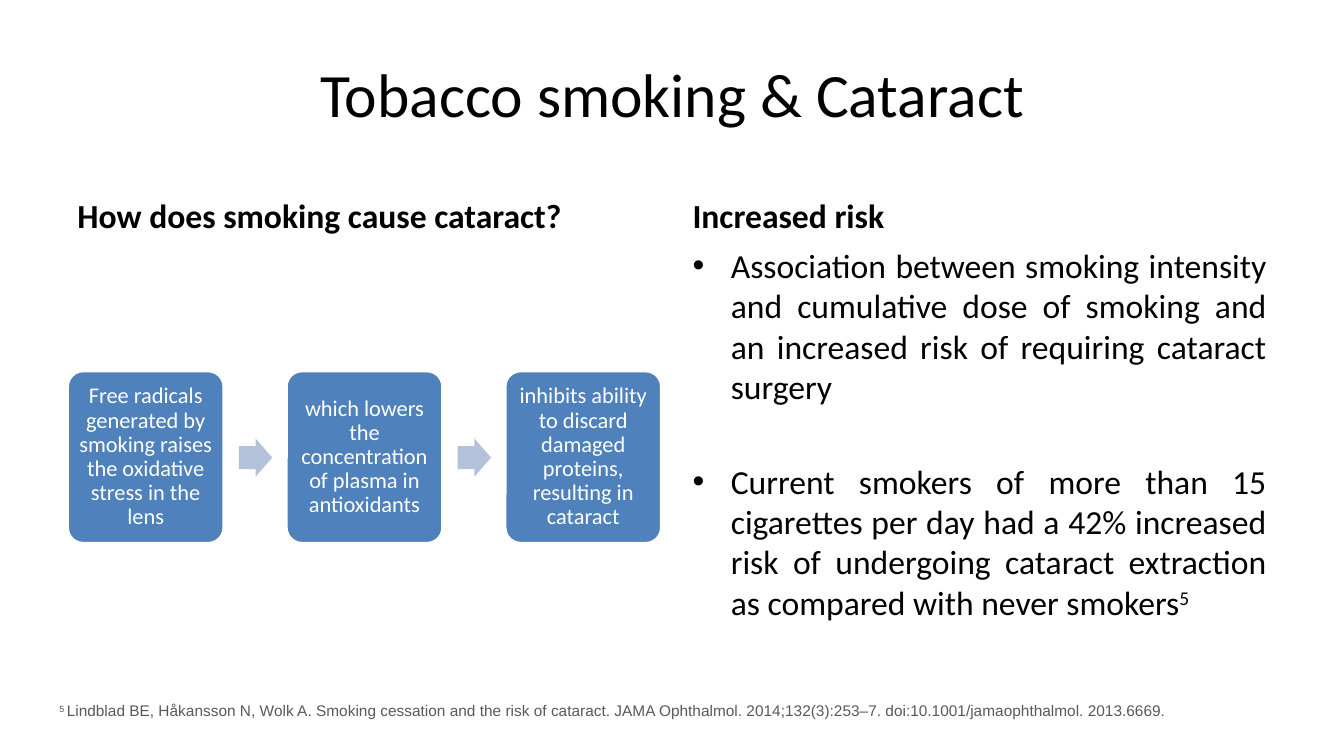
"""Build the slide on tobacco smoking and cataract."""
from lxml import etree
from pptx import Presentation
from pptx import util as u
from pptx.dml.color import RGBColor
from pptx.enum import shapes, text
from pptx.oxml.ns import qn

COLOURS = {"text": "000000", "box": "4F81BD", "arrow": "B3C1DB", "white": "FFFFFF", "source": "595959"}


def set_font(paragraph, size, colour="text", name="Calibri", bold=False):
    paragraph.font.name = name
    paragraph.font.size = u.Pt(size)
    paragraph.font.bold = bold
    paragraph.font.color.rgb = RGBColor.from_string(COLOURS[colour])


def add_text_frame(slide, left, top, width, height, anchor):
    frame = slide.shapes.add_textbox(u.Inches(left), u.Inches(top), u.Inches(width), u.Inches(height)).text_frame
    frame.word_wrap = True
    frame.vertical_anchor = anchor
    return frame


presentation = Presentation()
presentation.slide_width = u.Inches(13.33)
presentation.slide_height = u.Inches(7.5)
slide = presentation.slides.add_slide(presentation.slide_layouts[6])

title = add_text_frame(slide, 0.67, 0.3, 12, 1.25, text.MSO_ANCHOR.MIDDLE).paragraphs[0]
title.text = "Tobacco smoking & Cataract"
title.alignment = text.PP_ALIGN.CENTER
set_font(title, 44)

for left, heading in [(0.67, "How does smoking cause cataract?"), (6.77, "Increased risk")]:
    paragraph = add_text_frame(slide, left, 1.68, 5.89, 0.7, text.MSO_ANCHOR.BOTTOM).paragraphs[0]
    paragraph.text = heading
    set_font(paragraph, 24, bold=True)

steps = [
    "Free radicals generated by smoking raises the oxidative stress in the lens",
    "which lowers the concentration of plasma in antioxidants",
    "inhibits ability to discard damaged proteins, resulting in cataract",
]
for index, step in enumerate(steps):
    left = 0.67 + 2.17 * index
    box = slide.shapes.add_shape(shapes.MSO_SHAPE.ROUNDED_RECTANGLE, u.Inches(left), u.Inches(3.68),
                                 u.Inches(1.55), u.Inches(1.71))
    box.adjustments[0] = 0.1
    box.shadow.inherit = False
    box.fill.solid()
    box.fill.fore_color.rgb = RGBColor.from_string(COLOURS["box"])
    box.line.color.rgb = RGBColor.from_string(COLOURS["white"])
    box.line.width = u.Pt(2)
    frame = box.text_frame
    frame.word_wrap = True
    frame.vertical_anchor = text.MSO_ANCHOR.MIDDLE
    frame.margin_left = frame.margin_right = frame.margin_top = frame.margin_bottom = u.Inches(0.07)
    paragraph = frame.paragraphs[0]
    paragraph.text = step
    paragraph.alignment = text.PP_ALIGN.CENTER
    paragraph.line_spacing = 0.9
    set_font(paragraph, 16, "white")
    if index < len(steps) - 1:
        arrow = slide.shapes.add_shape(shapes.MSO_SHAPE.RIGHT_ARROW, u.Inches(left + 1.7), u.Inches(4.35),
                                       u.Inches(0.33), u.Inches(0.38))
        arrow.adjustments[0] = 0.6
        arrow.shadow.inherit = False
        arrow.fill.solid()
        arrow.fill.fore_color.rgb = RGBColor.from_string(COLOURS["arrow"])
        arrow.line.fill.background()

risks = [
    ("Association between smoking intensity and cumulative dose of smoking and an increased risk of "
     "requiring cataract surgery", ""),
    ("Current smokers of more than 15 cigarettes per day had a 42% increased risk of undergoing "
     "cataract extraction as compared with never smokers", "5"),
]
risk_frame = add_text_frame(slide, 6.77, 2.38, 5.89, 4.32, text.MSO_ANCHOR.TOP)
for index, (risk, reference) in enumerate(risks):
    paragraph = risk_frame.add_paragraph() if index else risk_frame.paragraphs[0]
    paragraph.add_run().text = risk
    if reference:
        run = paragraph.add_run()
        run.text = reference
        run._r.get_or_add_rPr().set("baseline", "30000")
    paragraph.alignment = text.PP_ALIGN.JUSTIFY
    properties = paragraph._p.get_or_add_pPr()
    properties.set("marL", str(u.Inches(0.38)))
    properties.set("indent", str(u.Inches(-0.38)))
    etree.SubElement(properties, qn("a:buFont")).set("typeface", "Arial")
    etree.SubElement(properties, qn("a:buChar")).set("char", "•")
    if index:
        paragraph.space_before = u.Pt(39)
    set_font(paragraph, 24)

citation = add_text_frame(slide, 0.49, 6.91, 12.35, 0.29, text.MSO_ANCHOR.TOP).paragraphs[0]
marker = citation.add_run()
marker.text = "5 "
marker._r.get_or_add_rPr().set("baseline", "30000")
citation.add_run().text = (
    "Lindblad BE, Håkansson N, Wolk A. Smoking cessation and the risk of cataract. "
    "JAMA Ophthalmol. 2014;132(3):253–7. doi:10.1001/jamaophthalmol. 2013.6669."
)
set_font(citation, 11, "source", "Arial")

presentation.save("out.pptx")
